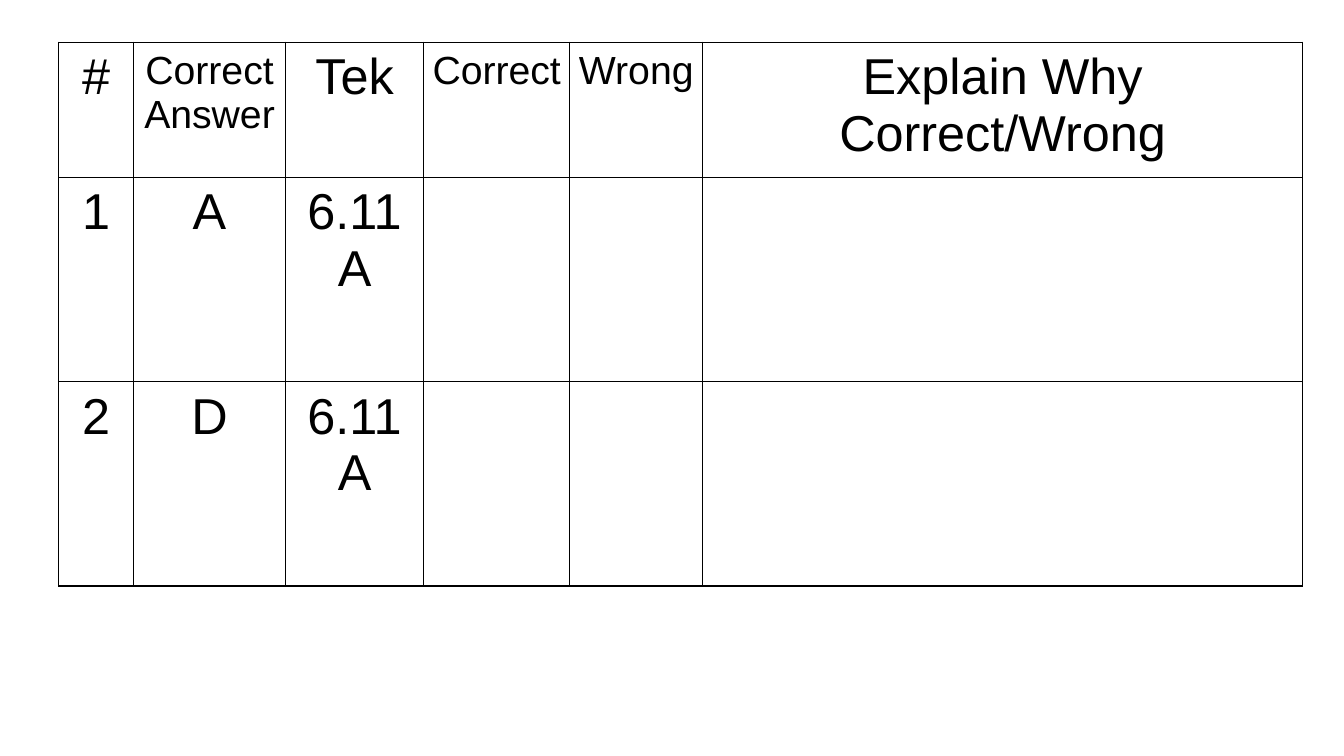
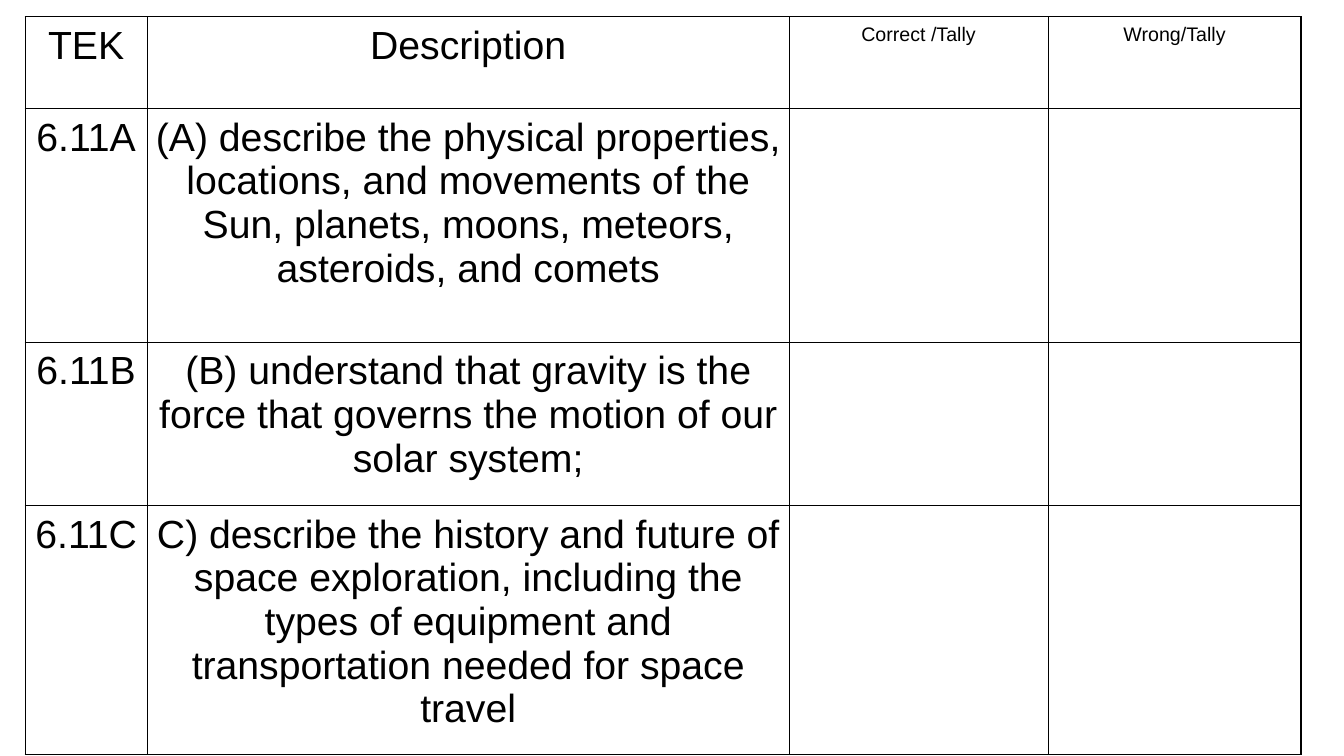
from lxml.etree import SubElement
from pptx import Presentation
from pptx.dml.color import RGBColor
from pptx.enum.text import MSO_ANCHOR as Anchor, PP_ALIGN as Align
from pptx.oxml.ns import qn
from pptx.util import Pt

BLACK = RGBColor(0x00, 0x00, 0x00)
WHITE = RGBColor(0xFF, 0xFF, 0xFF)
FONT = "Arial"
INSET = Pt(5)
LARGE, MEDIUM, SMALL = 36, 28, 14


def write_text(frame, text, size=MEDIUM, color=BLACK, align=Align.CENTER):
    paragraph = frame.paragraphs[0]
    paragraph.alignment = align
    run = paragraph.add_run()
    run.text = text
    run.font.name = FONT
    run.font.size = Pt(size)
    run.font.bold = False
    run.font.color.rgb = color


def outline_cell(cell, width=1, color=BLACK):
    properties = cell._tc.get_or_add_tcPr()
    for side in ("lnL", "lnR", "lnT", "lnB"):
        border = SubElement(properties, qn(f"a:{side}"), w=str(Pt(width)))
        fill = SubElement(border, qn("a:solidFill"))
        SubElement(fill, qn("a:srgbClr"), val=str(color))


def format_cell(cell):
    outline_cell(cell)
    cell.fill.solid()
    cell.fill.fore_color.rgb = WHITE
    cell.vertical_anchor = Anchor.TOP
    cell.margin_left = cell.margin_right = INSET
    cell.margin_top = cell.margin_bottom = INSET


def add_grid(slide, left, top, widths, heights, headings, entries, entry_size):
    grid = slide.shapes.add_table(
        len(heights), len(widths), Pt(left), Pt(top),
        Pt(sum(widths)), Pt(sum(heights))).table
    grid.first_row = grid.horz_banding = False
    for column, width in zip(grid.columns, widths):
        column.width = Pt(width)
    for row, height in zip(grid.rows, heights):
        row.height = Pt(height)
    for cell in grid.iter_cells():
        format_cell(cell)
    for index, (heading, size) in enumerate(headings):
        write_text(grid.cell(0, index).text_frame, heading, size=size)
    for row_index, entry in enumerate(entries, start=1):
        for index, text in enumerate(entry):
            write_text(grid.cell(row_index, index).text_frame, text, size=entry_size)


def add_answer_slide(deck):
    slide = deck.slides.add_slide(deck.slide_layouts[6])
    add_grid(
        slide, 42, 30.2,
        widths=[53.3, 108.7, 98.6, 104.4, 95, 428.4],
        heights=[96.4, 146, 146],
        headings=[("#", LARGE), ("Correct Answer", MEDIUM), ("Tek", LARGE),
                  ("Correct", MEDIUM), ("Wrong", MEDIUM),
                  ("Explain Why Correct/Wrong", LARGE)],
        entries=[("1", "A", "6.11A"), ("2", "D", "6.11A")],
        entry_size=LARGE)


def add_tally_slide(deck):
    slide = deck.slides.add_slide(deck.slide_layouts[6])
    add_grid(
        slide, 18, 12,
        widths=[87.1, 458.6, 185, 180.7],
        heights=[65.7, 167, 116.5, 177.8],
        headings=[("TEK", MEDIUM), ("Description", MEDIUM),
                  ("Correct /Tally", SMALL), ("Wrong/Tally", SMALL)],
        entries=[
            ("6.11A", "(A) describe the physical properties, locations, and "
                      "movements of the Sun, planets, moons, meteors, "
                      "asteroids, and comets"),
            ("6.11B", "(B) understand that gravity is the force that governs "
                      "the motion of our solar system;"),
            ("6.11C", "C) describe the history and future of space "
                      "exploration, including the types of equipment and "
                      "transportation needed for space travel"),
        ],
        entry_size=MEDIUM)


def main():
    deck = Presentation()
    deck.slide_width, deck.slide_height = Pt(960), Pt(540)
    add_answer_slide(deck)
    add_tally_slide(deck)
    deck.save("out.pptx")


if __name__ == "__main__":
    main()
